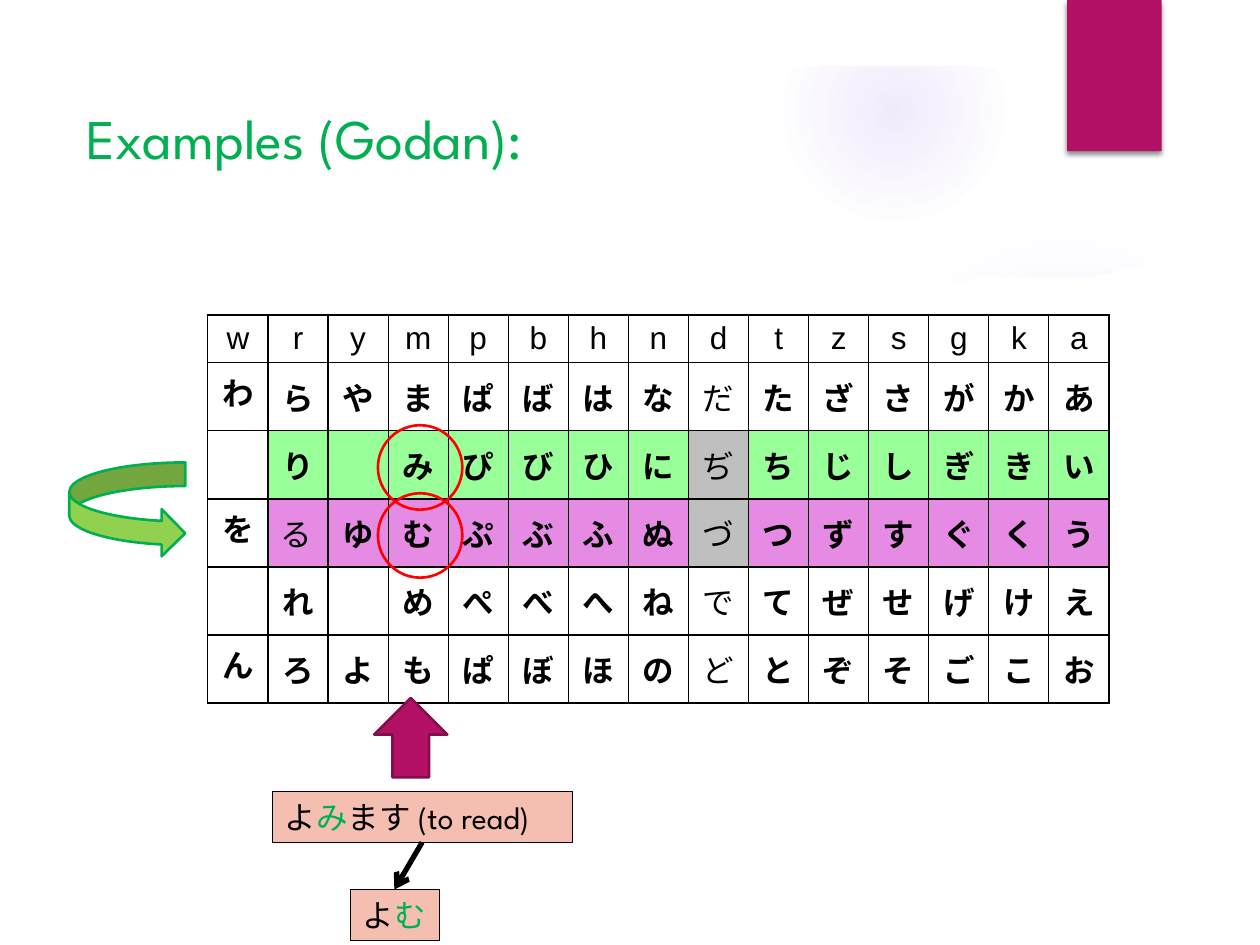
"""Build the Godan verb examples slide with its kana table."""
import lxml.etree
import pptx
import pptx.dml.color
import pptx.enum.shapes
import pptx.enum.text
import pptx.oxml
import pptx.oxml.ns
import pptx.util

THEME = {
    "white": "FFFFFF", "black": "000000", "accent": "B31166", "accent_edge": "840D4B",
    "green": "00B050", "lime": "92D050", "red": "FF0000", "peach": "F4BFB1",
    "i_row": "99FF99", "u_row": "E68BE3", "grey": "BFBFBF", "glow": "9B6BF2",
    "title": 32, "body": 18, "display": "League Spartan", "kana": "Comic Neue", "plain": "Arial",
}
NS = pptx.oxml.ns.nsdecls("a")
SHAPE = pptx.enum.shapes.MSO_SHAPE
ALIGN = pptx.enum.text.PP_ALIGN
ANCHOR = pptx.enum.text.MSO_ANCHOR

prs = pptx.Presentation()
prs.slide_width = pptx.util.Inches(10)
prs.slide_height = pptx.util.Inches(7.5)
s = prs.slides.add_slide(prs.slide_layouts[5])
u = prs.slide_width / 100


def write(p, text, color="black", font="display", size="body", bold=False, align=ALIGN.LEFT):
    p.alignment = align
    r = p.add_run()
    r.text = text
    r.font.name = THEME[font]
    r.font.size = pptx.util.Pt(THEME[size])
    r.font.bold = bold
    r.font.color.rgb = pptx.dml.color.RGBColor.from_string(THEME[color])


def draw(kind, x, y, w, h, fill=None, line=None, width=1.5):
    sp = s.shapes.add_shape(kind, *(round(v * u) for v in (x, y, w, h)))
    sp.shadow.inherit = False
    if fill:
        sp.fill.solid()
        sp.fill.fore_color.rgb = pptx.dml.color.RGBColor.from_string(THEME[fill])
    else:
        sp.fill.background()
    if line:
        sp.line.color.rgb = pptx.dml.color.RGBColor.from_string(THEME[line])
        sp.line.width = pptx.util.Pt(width)
    else:
        sp.line.fill.background()
    return sp


glows = [
    (68.9, 18.3, 30.8, ((0, 7), (36, 6), (69, 0))),
    (62.2, 0, 17.5, ((0, 14), (36, 7), (73, 0))),
]
for x, y, d, stops in glows:
    sp = draw(SHAPE.OVAL, x, y, d, d)
    gs = "".join(
        f'<a:gs pos="{pos * 1000}"><a:srgbClr val="{THEME["glow"]}">'
        f'<a:alpha val="{alpha * 1000}"/></a:srgbClr></a:gs>' for pos, alpha in stops)
    grad = pptx.oxml.parse_xml(
        f'<a:gradFill {NS} rotWithShape="1"><a:gsLst>{gs}</a:gsLst><a:path path="circle">'
        '<a:fillToRect l="50000" t="50000" r="50000" b="50000"/></a:path></a:gradFill>')
    no_fill = sp.element.spPr.find(pptx.oxml.ns.qn("a:noFill"))
    sp.element.spPr.replace(no_fill, grad)

swoosh = [(69.9, 23.4), (75, 23.3), (82, 22.7), (89, 21.8), (95.6, 20.8), (95.1, 17.4),
          (90.1, 19.2), (85, 20.3), (80.1, 21.3), (75.4, 22.1), (69.6, 22.9)]
panel = [(5.3, 20.3), (5.3, 69.9), (94.7, 69.9), (94.7, 20.3), (90.6, 20.9), (86.6, 21.5),
         (82.5, 21.9), (78.5, 22.4), (74.4, 22.7), (70.4, 22.9), (62.5, 23.3), (54.8, 23.4),
         (43.9, 23.4), (33.8, 23), (24.9, 22.4), (17.3, 21.7), (9.9, 20.9)]
for points, opacity, turn in ((swoosh, 20, 350.2), (panel, 100, 0)):
    fb = s.shapes.build_freeform(*points[0], scale=u)
    fb.add_line_segments(points[1:])
    sp = fb.convert_to_shape()
    sp.rotation = turn
    sp.shadow.inherit = False
    sp.fill.solid()
    sp.fill.fore_color.rgb = pptx.dml.color.RGBColor.from_string(THEME["white"])
    sp.line.fill.background()
    if opacity < 100:
        color = sp.element.spPr.find(".//" + pptx.oxml.ns.qn("a:srgbClr"))
        lxml.etree.SubElement(color, pptx.oxml.ns.qn("a:alpha"), val=str(opacity * 1000))

border = draw(SHAPE.FRAME, 0, 0, 100, 75, fill="white")
border.adjustments[0] = 0.07

tab = draw(SHAPE.RECTANGLE, 84.7, 0, 7.5, 12, fill="accent")
effects = tab.element.spPr.find(pptx.oxml.ns.qn("a:effectLst"))
effects.append(pptx.oxml.parse_xml(
    f'<a:outerShdw {NS} blurRad="38100" dist="25400" dir="5400000" rotWithShape="0">'
    '<a:srgbClr val="000000"><a:alpha val="45000"/></a:srgbClr></a:outerShdw>'))

title = s.shapes.title
s.shapes.element.append(title.element)
title.left, title.top, title.width, title.height = (round(v * u) for v in (5.83, 5.5, 90, 10.8))
title.text_frame.vertical_anchor = ANCHOR.MIDDLE
write(title.text_frame.paragraphs[0], "Examples (Godan):", color="green", size="title")

kana = [
    "wrympbhndtzsgka",
    "わらやまぱばはなだたざさがかあ",
    " り みぴびひにぢちじしぎきい",
    "をるゆむぷぶふぬづつずすぐくう",
    " れ めぺべへねでてぜせげけえ",
    "んろよもぱぼほのどとぞそごこお",
]
left, top, col, head, row = 16.5, 25, 4.77, 3.7, 5.4
frame = s.shapes.add_table(
    len(kana), len(kana[0]),
    *(round(v * u) for v in (left, top, col * len(kana[0]), head + row * 5)))
table = frame.table
table.first_row = table.horz_banding = False
for c in table.columns:
    c.width = round(col * u)
for i, line in enumerate(kana):
    table.rows[i].height = round((row if i else head) * u)
    for j, text in enumerate(line):
        cell = table.cell(i, j)
        cell.vertical_anchor = ANCHOR.MIDDLE if j else ANCHOR.TOP
        fill = {2: "i_row", 3: "u_row"}.get(i, "white") if j else "white"
        if j == 8 and i in (2, 3):
            fill = "grey"
        cell.fill.solid()
        cell.fill.fore_color.rgb = pptx.dml.color.RGBColor.from_string(THEME[fill])
        font = "display" if text == "る" else "plain" if i == 0 or j == 8 else "kana"
        if text.strip():
            write(cell.text_frame.paragraphs[0], text, font=font, bold=font == "kana",
                  align=ALIGN.LEFT if text == "る" else ALIGN.CENTER)
        tcPr = cell._tc.get_or_add_tcPr()
        for k, side in enumerate(("lnL", "lnR", "lnT", "lnB")):
            tcPr.insert(k, pptx.oxml.parse_xml(
                f'<a:{side} {NS} w="9525"><a:solidFill><a:srgbClr val="{THEME["black"]}"/>'
                f'</a:solidFill></a:{side}>'))

draw(SHAPE.CURVED_RIGHT_ARROW, 5.5, 36.7, 9.2, 7.5, fill="lime", line="green")
for i in (1, 2):
    draw(SHAPE.OVAL, left + 3.5 * col - 3.2, top + head + (i + 0.5) * row - 3.05,
         6.7, 6.7, line="red")
draw(SHAPE.UP_ARROW, 29.7, 55.4, 5.8, 6.3, fill="accent", line="accent_edge")

examples = [
    ((21.63, 62.82, 23.8, 4.04), (("よ", "black"), ("み", "green"), ("ます (to read)", "black"))),
    ((27.8, 70.6, 7.1, 4.04), (("よ", "black"), ("む", "green"))),
]
for place, runs in examples:
    sp = draw(SHAPE.RECTANGLE, *place, fill="peach", line="black", width=0.75)
    tf = sp.text_frame
    tf.word_wrap = False
    tf.vertical_anchor = ANCHOR.TOP
    for text, color in runs:
        write(tf.paragraphs[0], text, color=color)

arrow = s.shapes.add_connector(
    pptx.enum.shapes.MSO_CONNECTOR.STRAIGHT, *(round(v * u) for v in (33.5, 66.86, 31.3, 70.6)))
arrow.line.color.rgb = pptx.dml.color.RGBColor.from_string(THEME["black"])
arrow.line.width = pptx.util.Pt(3)
lxml.etree.SubElement(arrow.line._get_or_add_ln(), pptx.oxml.ns.qn("a:tailEnd"), type="arrow")
lxml.etree.SubElement(arrow.element.spPr, pptx.oxml.ns.qn("a:effectLst"))

prs.save("out.pptx")
